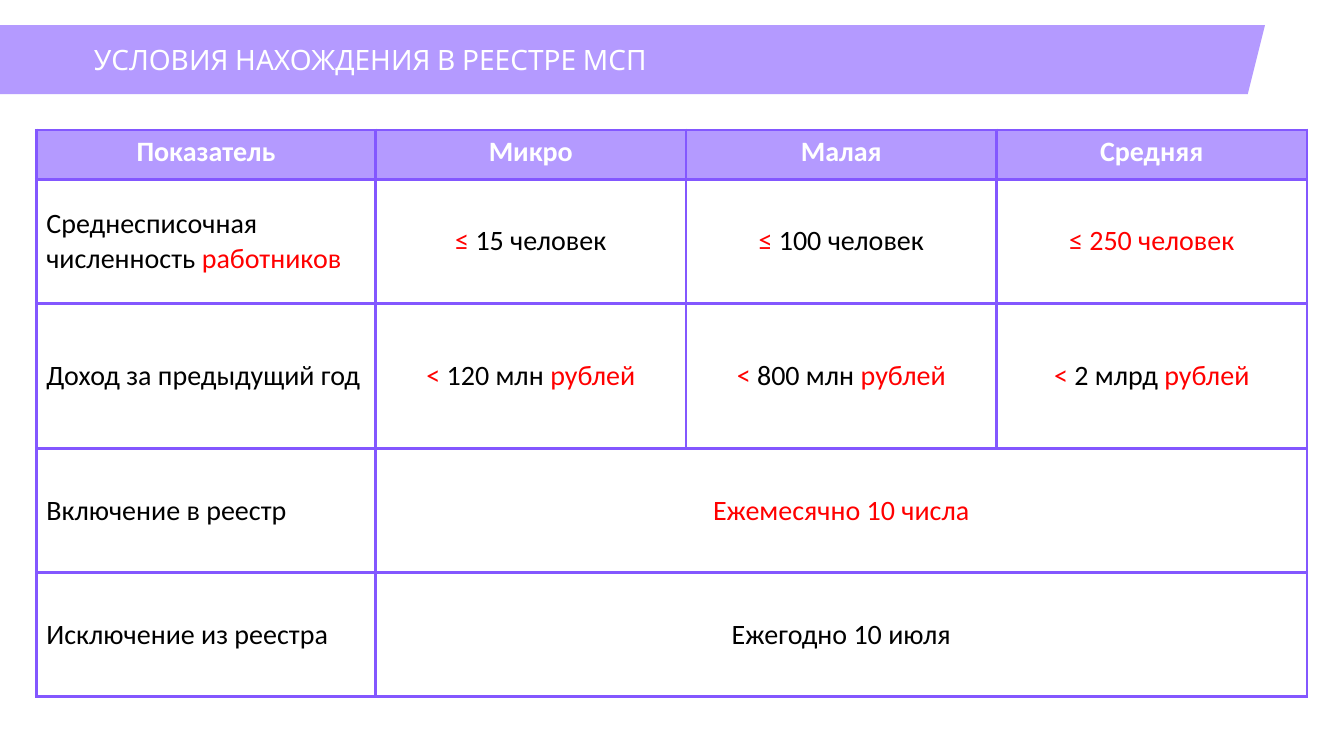
import dataclasses

import lxml.etree
import pptx
import pptx.dml.color
import pptx.enum.shapes
import pptx.enum.text
import pptx.oxml.ns
import pptx.util

ALIGN = pptx.enum.text.PP_ALIGN
ANCHOR = pptx.enum.text.MSO_ANCHOR
UNITS_PER_INCH = 12  # the page is a grid of 160 columns by 90 rows


@dataclasses.dataclass(frozen=True)
class Theme:
    accent: str = "8357FF"
    accent_opacity: int = 60
    light: str = "FFFFFF"
    dark: str = "000000"
    alert: str = "FF0000"
    title_font: str = "Karla"
    body_font: str = "Calibri"
    size: int = 20
    border: float = 2.25


def grid(*units):
    return [pptx.util.Inches(unit / UNITS_PER_INCH) for unit in units]


def write(frame, text, *, font, size, colors, bold=False, align=ALIGN.LEFT):
    """Write one paragraph; each | in the text switches to the other colour."""
    para = frame.paragraphs[0]
    para.alignment = align
    for index, part in enumerate(text.split("|")):
        if part:
            span = para.add_run()
            span.text = part
            span.font.name = font
            span.font.size = pptx.util.Pt(size)
            span.font.bold = bold
            span.font.color.rgb = pptx.dml.color.RGBColor.from_string(
                colors[index % len(colors)])


def add_child(parent, tag, **attributes):
    return lxml.etree.SubElement(parent, pptx.oxml.ns.qn(tag), attributes)


class Page:
    def __init__(self, deck, theme):
        self.theme = theme
        self.slide = deck.slides.add_slide(deck.slide_layouts[6])

    def tint(self, fill, properties):
        """Fill with the translucent accent colour."""
        fill.solid()
        fill.fore_color.rgb = pptx.dml.color.RGBColor.from_string(self.theme.accent)
        color = properties.find(pptx.oxml.ns.qn("a:solidFill"))[0]
        add_child(color, "a:alpha", val=str(self.theme.accent_opacity * 1000))

    def banner(self, text, left, top, width, height):
        shape = self.slide.shapes.add_shape(
            pptx.enum.shapes.MSO_SHAPE.PARALLELOGRAM, *grid(left, top, width, height))
        shape.shadow.inherit = False
        shape.line.fill.background()
        self.tint(shape.fill, shape.element.spPr)
        shape.text_frame.vertical_anchor = ANCHOR.MIDDLE
        write(shape.text_frame, text, font=self.theme.title_font,
              size=self.theme.size, colors=[self.theme.light])

    def outline(self, cell):
        properties = cell._tc.get_or_add_tcPr()
        for side in ("a:lnL", "a:lnR", "a:lnT", "a:lnB"):
            line = add_child(properties, side, w=str(pptx.util.Pt(self.theme.border)))
            add_child(add_child(line, "a:solidFill"), "a:srgbClr", val=self.theme.accent)

    def table(self, rows, left, top, widths, heights):
        frame = self.slide.shapes.add_table(
            len(heights), len(widths), *grid(left, top, sum(widths), sum(heights)))
        table = frame.table
        for column, width in zip(table.columns, grid(*widths)):
            column.width = width
        for row, height in zip(table.rows, grid(*heights)):
            row.height = height
        for row_index, texts in enumerate(rows):
            header = row_index == 0
            for column_index in range(len(widths)):
                cell = table.cell(row_index, column_index)
                self.outline(cell)
                if header:
                    self.tint(cell.fill, cell._tc.tcPr)
                else:
                    cell.fill.background()
                    cell.vertical_anchor = ANCHOR.MIDDLE
                if column_index < len(texts):
                    centered = header or column_index > 0
                    write(cell.text_frame, texts[column_index],
                          font=self.theme.body_font, size=self.theme.size, bold=header,
                          colors=[self.theme.light] if header
                          else [self.theme.dark, self.theme.alert],
                          align=ALIGN.CENTER if centered else ALIGN.LEFT)
            # A short row stretches its last text to the right edge
            if len(texts) < len(widths):
                table.cell(row_index, len(texts) - 1).merge(
                    table.cell(row_index, len(widths) - 1))


CONDITIONS = [
    ["Показатель", "Микро", "Малая", "Средняя"],
    ["Среднесписочная численность |работников",
     "|≤ |15 человек", "|≤ |100 человек", "|≤ 250 человек"],
    ["Доход за предыдущий год",
     "|< |120 млн |рублей", "|< |800 млн |рублей", "|< |2 млрд |рублей"],
    ["Включение в реестр", "|Ежемесячно 10 числа"],
    ["Исключение из реестра", "Ежегодно 10 июля"],
]


def main():
    deck = pptx.Presentation()
    deck.slide_width, deck.slide_height = grid(160, 90)
    page = Page(deck, Theme())

    # Title band
    page.banner("УСЛОВИЯ НАХОЖДЕНИЯ В РЕЕСТРЕ МСП", -3.7, 3, 154.3, 8.2)

    # Table of conditions
    page.table(CONDITIONS, 4.32, 15.48,
               widths=[40.4] + [36.96] * 3,
               heights=[5.88, 14.76, 17.28, 14.76, 14.76])

    deck.save("out.pptx")


if __name__ == "__main__":
    main()
